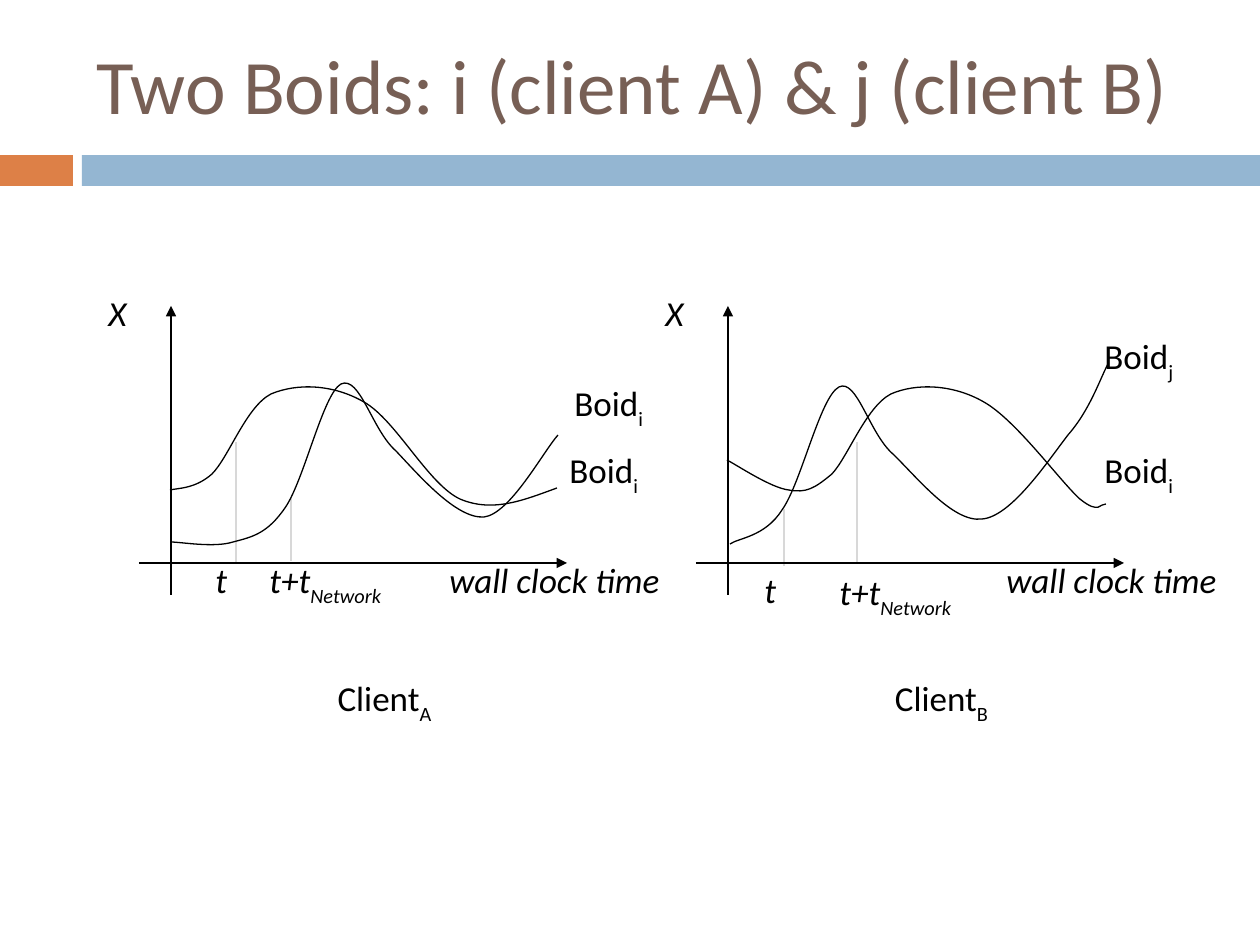
from lxml.etree import SubElement
from pptx import Presentation
from pptx.dml.color import RGBColor as RGB
from pptx.enum.shapes import MSO_CONNECTOR as LINK, MSO_SHAPE as SHAPE
from pptx.enum.text import MSO_ANCHOR as ANCHOR, PP_ALIGN as ALIGN
from pptx.oxml.ns import qn
from pptx.util import Pt

PX = 914400 / 126
BLACK = RGB(0x00, 0x00, 0x00)
WHITE = RGB(0xFF, 0xFF, 0xFF)
GREY = RGB(0xD8, 0xD8, 0xD8)
BROWN = RGB(0x77, 0x5F, 0x55)
ORANGE = RGB(0xDD, 0x80, 0x47)
BLUE = RGB(0x94, 0xB6, 0xD2)


def emu(*lengths):
    return [round(length * PX) for length in lengths]


class Sketch:
    font = "Calibri"
    size = Pt(20)
    stroke = Pt(0.75)

    def __init__(self, slide):
        self.slide = slide
        self.shapes = slide.shapes

    def bar(self, place, color):
        bar = self.shapes.add_shape(SHAPE.RECTANGLE, *emu(*place))
        bar.shadow.inherit = False
        bar.fill.solid()
        bar.fill.fore_color.rgb = color
        bar.line.fill.background()

    def line(self, start, end, color=BLACK, arrow=False):
        line = self.shapes.add_connector(LINK.STRAIGHT, *emu(*start, *end))
        line.line.color.rgb = color
        line.line.width = self.stroke
        if arrow:
            SubElement(line.line._get_or_add_ln(), qn("a:tailEnd"), type="triangle")
        SubElement(line._element.spPr, qn("a:effectLst"))

    def curve(self, start, *points):
        builder = self.shapes.build_freeform(*start, scale=PX)
        builder.add_line_segments(points, close=False)
        curve = builder.convert_to_shape()
        curve.shadow.inherit = False
        curve.fill.background()
        curve.line.color.rgb = BLACK
        curve.line.width = self.stroke
        outline = next(curve._element.iter(qn("a:path")))
        steps = outline.findall(qn("a:lnTo"))
        for first in range(0, len(steps), 3):
            bezier = SubElement(outline, qn("a:cubicBezTo"))
            for step in steps[first:first + 3]:
                bezier.append(step[0])
                outline.remove(step)

    def text(self, place, words, sub="", italic=False, size=None, color=BLACK,
             align=ALIGN.LEFT, anchor=ANCHOR.TOP, framed=False):
        if framed:
            box = self.shapes.add_shape(SHAPE.RECTANGLE, *emu(*place))
            box.shadow.inherit = False
            box.fill.background()
            box.line.color.rgb = WHITE
            box.line.width = self.stroke
        else:
            box = self.shapes.add_textbox(*emu(*place))
        frame = box.text_frame
        frame.word_wrap = True
        frame.vertical_anchor = anchor
        paragraph = frame.paragraphs[0]
        paragraph.alignment = align
        font = paragraph.font
        font.name, font.size, font.italic = self.font, size or self.size, italic
        font.color.rgb = color
        paragraph.add_run().text = words
        if sub:
            lowered = paragraph.add_run()
            lowered.text = sub
            lowered.font._element.set("baseline", "-30000")

    def plot(self, left, client, guides, t_at, delay_at, boids, curves):
        for x, bottom, top in guides:
            self.line((x, bottom), (x, top), GREY)
        self.line((left + 171, 595), (left + 171, 306), arrow=True)
        self.line((left + 139, 563), (left + 567, 563), arrow=True)
        self.text((left + 96, 285, 64, 64), "X", italic=True, framed=True)
        self.text((left + 437, 552, 246, 107), "wall clock time", italic=True)
        self.text((left + 257, 670, 255, 107), "Client", client,
                  align=ALIGN.CENTER, framed=True)
        for points in curves:
            self.curve(*points)
        self.text((*t_at, 74, 97), "t", italic=True)
        self.text((*delay_at, 193, 97), "t+t", "Network", italic=True)
        for x, y, index in boids:
            self.text((x, y, 123, 73), "Boid", index)


def main():
    deck = Presentation()
    deck.slide_width, deck.slide_height = emu(1260, 945)
    sketch = Sketch(deck.slides.add_slide(deck.slide_layouts[6]))

    sketch.bar((0, 155, 73, 31), ORANGE)
    sketch.bar((82, 155, 1178, 31), BLUE)
    sketch.text((84, 16, 1124, 136), "Two Boids: i (client A) & j (client B)",
                size=Pt(44), color=BROWN, anchor=ANCHOR.MIDDLE)

    sketch.plot(
        left=0, client="A",
        guides=[(236, 564, 442), (291, 561, 498)],
        t_at=(203, 552), delay_at=(257, 552),
        boids=[(557, 442, "i"), (562, 375, "i")],
        curves=[
            [(170, 490),
             (178, 488), (195, 489), (212, 474), (229, 457), (246, 407), (271, 394),
             (297, 383), (333, 384), (364, 402), (396, 420), (428, 484), (460, 499),
             (493, 513), (524, 500), (557, 488)],
            [(171, 542),
             (181, 542), (214, 548), (233, 542), (252, 537), (267, 534), (285, 508),
             (304, 481), (323, 394), (341, 384), (360, 375), (372, 430), (396, 451),
             (418, 474), (456, 519), (484, 517), (510, 514), (543, 452), (558, 435)],
        ])
    sketch.plot(
        left=557, client="B",
        guides=[(857, 564, 442), (784, 566, 509)],
        t_at=(752, 562), delay_at=(827, 564),
        boids=[(1092, 442, "i"), (1092, 328, "j")],
        curves=[
            [(727, 460),
             (737, 465), (771, 488), (789, 490), (806, 493), (814, 489), (832, 474),
             (848, 457), (866, 407), (891, 394), (916, 383), (953, 384), (984, 402),
             (1016, 420), (1060, 481), (1080, 499), (1100, 515), (1100, 503), (1106, 504)],
            [(730, 544),
             (738, 538), (765, 537), (782, 510), (801, 484), (820, 397), (839, 387),
             (857, 378), (869, 433), (893, 454), (916, 476), (953, 523), (982, 519),
             (1011, 517), (1048, 461), (1068, 435), (1090, 410), (1100, 379), (1108, 364)],
        ])
    deck.save("out.pptx")


if __name__ == "__main__":
    main()
